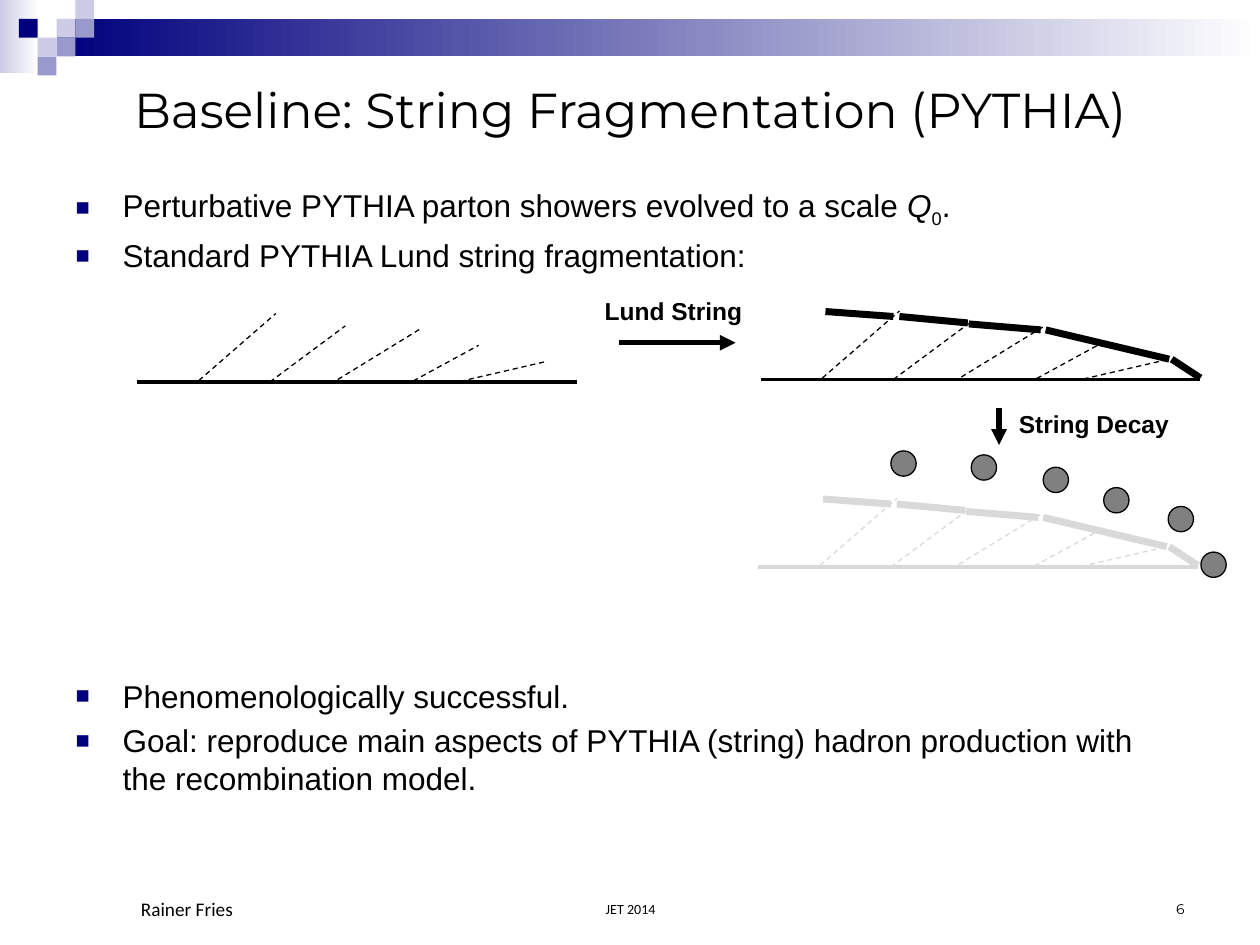
from dataclasses import dataclass

import pptx
import pptx.dml.color
import pptx.enum.dml
import pptx.enum.shapes
import pptx.enum.text
import pptx.oxml
import pptx.oxml.ns
import pptx.util

Cm, Pt = pptx.util.Cm, pptx.util.Pt
Kind = pptx.enum.shapes.MSO_SHAPE
Align = pptx.enum.text.PP_ALIGN
Anchor = pptx.enum.text.MSO_ANCHOR
qn = pptx.oxml.ns.qn

BLACK, NAVY, GREY, PALE = "000000", "00007D", "808080", "D9D9D9"
LILAC, MAUVE, WHITE = "CCCCE6", "9999CC", "FFFFFF"
STEP = 0.38  # side of a corner square, cm


@dataclass
class Seg:
    x1: float
    y1: float
    x2: float
    y2: float


@dataclass
class Label:
    text: str
    x: float
    y: float
    w: float
    h: float
    font: str
    size: float
    align: Align = Align.LEFT
    anchor: Anchor = Anchor.BOTTOM
    bold: bool = False
    wrap: bool = True


@dataclass
class Fan:
    x: float
    y: float
    tint: str
    cord: bool  # whether the thick string joins the ray tips


# Fan geometry, measured from the left end of its base line
BASE = Seg(0, 0, 8.86, 0)
RAYS = [
    Seg(1.24, -0.03, 2.79, -1.38), Seg(2.67, 0, 4.19, -1.13),
    Seg(4.04, -0.05, 5.72, -1.08), Seg(5.56, -0.02, 6.88, -0.74),
    Seg(6.5, -0.01, 8.23, -0.41),
]
CORDS = [
    Seg(8.86, -0.03, 8.28, -0.41), Seg(8.23, -0.41, 5.74, -1),
    Seg(5.64, -1, 4.19, -1.12), Seg(4.17, -1.14, 2.79, -1.27),
    Seg(2.67, -1.27, 1.3, -1.37),
]
FANS = [
    Fan(2.77, 7.7, BLACK, False),
    Fan(15.34, 7.65, BLACK, True),
    Fan(15.29, 11.43, PALE, True),
]
HADRONS = [(17.96, 9.09), (19.58, 9.17), (21.03, 9.42),
           (22.25, 9.83), (23.55, 10.21), (24.21, 11.13)]
ARROWS = [Seg(12.47, 6.91, 14.83, 6.91), Seg(20.14, 8.23, 20.14, 8.97)]
# Corner squares: column, row, colour
SQUARES = [(2, 1, LILAC), (3, 0, LILAC), (3, 1, MAUVE), (1, 2, LILAC),
           (0, 1, NAVY), (2, 2, MAUVE), (1, 3, MAUVE)]
LABELS = [
    Label("JET 2014", 8.69, 17.35, 8.05, 1.27, "Calibri", 8, Align.CENTER),
    Label("6", 18.21, 17.35, 5.92, 1.27, "Montserrat", 8, Align.RIGHT),
    Label("Rainer Fries", 2.59, 17.35, 5.92, 1.32, "Calibri", 11),
    Label("Lund String", 11.94, 5.84, 3.3, 0.86, "Arial", 14,
          anchor=Anchor.TOP, bold=True, wrap=False),
    Label("String Decay", 20.29, 8.13, 3.56, 0.86, "Arial", 14,
          anchor=Anchor.TOP, bold=True, wrap=False),
]
# Body points: runs of (text, style), space before in points
POINTS = [
    ([("Perturbative PYTHIA parton showers evolved to a scale ", ""),
      ("Q", "slant"), ("0", "sub"), (".", "")], 0),
    ([("Standard PYTHIA Lund string fragmentation:", "")], 4),
    ([("Phenomenologically successful.", "")], 230),
    ([("Goal: reproduce main aspects of PYTHIA (string) hadron production "
       "with the recombination model.", "")], 4),
]


def paint(hue: str) -> pptx.dml.color.RGBColor:
    return pptx.dml.color.RGBColor.from_string(hue)


def add(host, tag: str, **attrs: str):
    node = pptx.oxml.parse_xml(f'<{tag} {pptx.oxml.ns.nsdecls("a")}/>')
    for name, value in attrs.items():
        node.set(name, value)
    host.append(node)
    return node


def place(item, x: float, y: float, w: float, h: float) -> None:
    item.left, item.top, item.width, item.height = map(Cm, (x, y, w, h))


def style(para, font: str, size: float, bold: bool = False) -> None:
    para.font.name, para.font.size, para.font.bold = font, Pt(size), bold
    para.font.color.rgb = paint(BLACK)


def block(slide, kind, x: float, y: float, w: float, h: float, hue: str,
          fade: bool = False, edge: bool = False) -> None:
    item = slide.shapes.add_shape(kind, Cm(x), Cm(y), Cm(w), Cm(h))
    item.shadow.inherit = False
    if fade:
        item.fill.gradient()
        item.fill.gradient_angle = 0
        for stop, tint in zip(item.fill.gradient_stops, (hue, WHITE)):
            stop.color.rgb = paint(tint)
    else:
        item.fill.solid()
        item.fill.fore_color.rgb = paint(hue)
    if edge:
        item.line.color.rgb = paint(BLACK)
        item.line.width = Pt(0.75)
    else:
        item.line.fill.background()


def stroke(slide, seg: Seg, hue: str, width: float, x: float = 0,
           y: float = 0, dash: bool = False, head: bool = False) -> None:
    ends = (x + seg.x1, y + seg.y1, x + seg.x2, y + seg.y2)
    link = slide.shapes.add_connector(
        pptx.enum.shapes.MSO_CONNECTOR.STRAIGHT, *map(Cm, ends))
    link.line.color.rgb = paint(hue)
    link.line.width = Pt(width)
    if dash:
        link.line.dash_style = pptx.enum.dml.MSO_LINE.DASH
    props = link._element.spPr
    if head:
        add(props.find(qn("a:ln")), "a:tailEnd", type="triangle")
    add(props, "a:effectLst")


def draw_fan(slide, fan: Fan) -> None:
    stroke(slide, BASE, fan.tint, 2.25, fan.x, fan.y)
    for ray in RAYS:
        stroke(slide, ray, fan.tint, 0.75, fan.x, fan.y, dash=True)
    for cord in CORDS if fan.cord else []:
        stroke(slide, cord, fan.tint, 4, fan.x, fan.y)


def write(slide, label: Label) -> None:
    box = slide.shapes.add_textbox(
        *map(Cm, (label.x, label.y, label.w, label.h)))
    frame = box.text_frame
    frame.word_wrap, frame.vertical_anchor = label.wrap, label.anchor
    para = frame.paragraphs[0]
    para.text, para.alignment = label.text, label.align
    style(para, label.font, label.size, label.bold)


def fill_body(frame) -> None:
    for i, (runs, gap) in enumerate(POINTS):
        para = frame.paragraphs[0] if i == 0 else frame.add_paragraph()
        para.space_before = Pt(gap)
        props = para._p.get_or_add_pPr()
        props.set("marL", str(Cm(0.95)))
        props.set("indent", str(-Cm(0.95)))
        add(add(props, "a:buClr"), "a:srgbClr", val=NAVY)
        add(props, "a:buSzPct", val="75000")
        add(props, "a:buFont", typeface="Arial")
        add(props, "a:buChar", char="■")
        style(para, "Arial", 18)
        for text, look in runs:
            run = para.add_run()
            run.text = text
            if look == "slant":
                run.font.italic = True
            elif look == "sub":
                run._r.get_or_add_rPr().set("baseline", "-25000")


def main() -> None:
    deck = pptx.Presentation()
    deck.slide_width, deck.slide_height = Cm(25.4), Cm(19.05)
    slide = deck.slides.add_slide(deck.slide_layouts[1])
    title, body = slide.placeholders

    # Banner and corner squares
    block(slide, Kind.RECTANGLE, 0, 0, 0.79, 1.47, LILAC, fade=True)
    block(slide, Kind.RECTANGLE, 1.14, STEP, 24.26, 0.76, NAVY, fade=True)
    for col, row, hue in SQUARES:
        block(slide, Kind.RECTANGLE, STEP * (col + 1), STEP * row,
              STEP, STEP, hue)

    # Title and points
    place(title, 1.27, 1.27, 22.86, 1.85)
    place(body, 1.27, 3.63, 22.86, 13.51)
    for item, anchor in ((title, Anchor.MIDDLE), (body, Anchor.TOP)):
        item.text_frame.auto_size = pptx.enum.text.MSO_AUTO_SIZE.NONE
        item.text_frame.vertical_anchor = anchor
    title.text_frame.text = "Baseline: String Fragmentation (PYTHIA)"
    title.text_frame.paragraphs[0].alignment = Align.CENTER
    style(title.text_frame.paragraphs[0], "Montserrat", 28)
    fill_body(body.text_frame)

    # Parton showers, hadrons, arrows and labels
    for fan in FANS:
        draw_fan(slide, fan)
    for x, y in HADRONS:
        block(slide, Kind.OVAL, x, y, 0.51, 0.51, GREY, edge=True)
    for arrow in ARROWS:
        stroke(slide, arrow, BLACK, 3, head=True)
    for label in LABELS:
        write(slide, label)

    deck.save("out.pptx")


if __name__ == "__main__":
    main()
